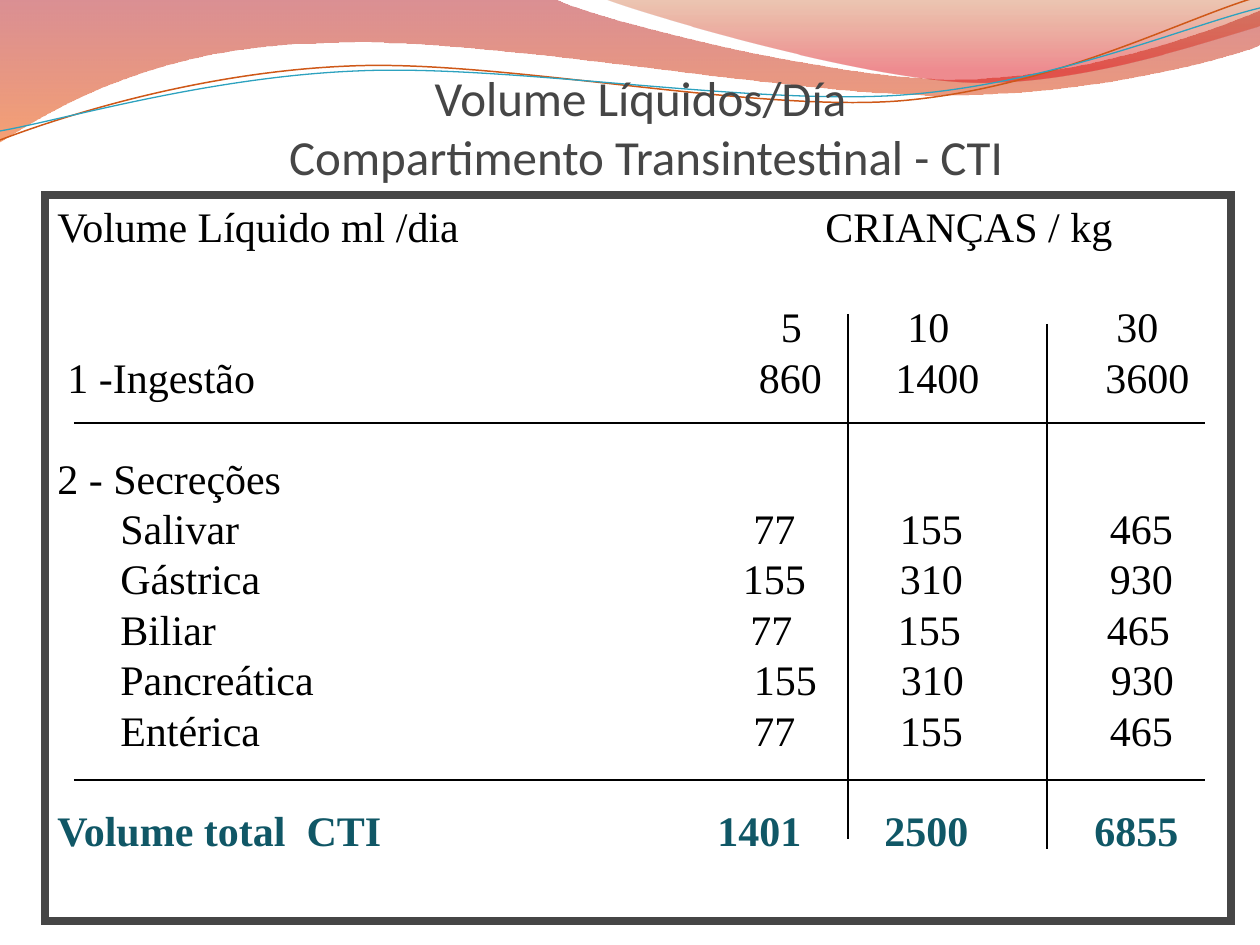
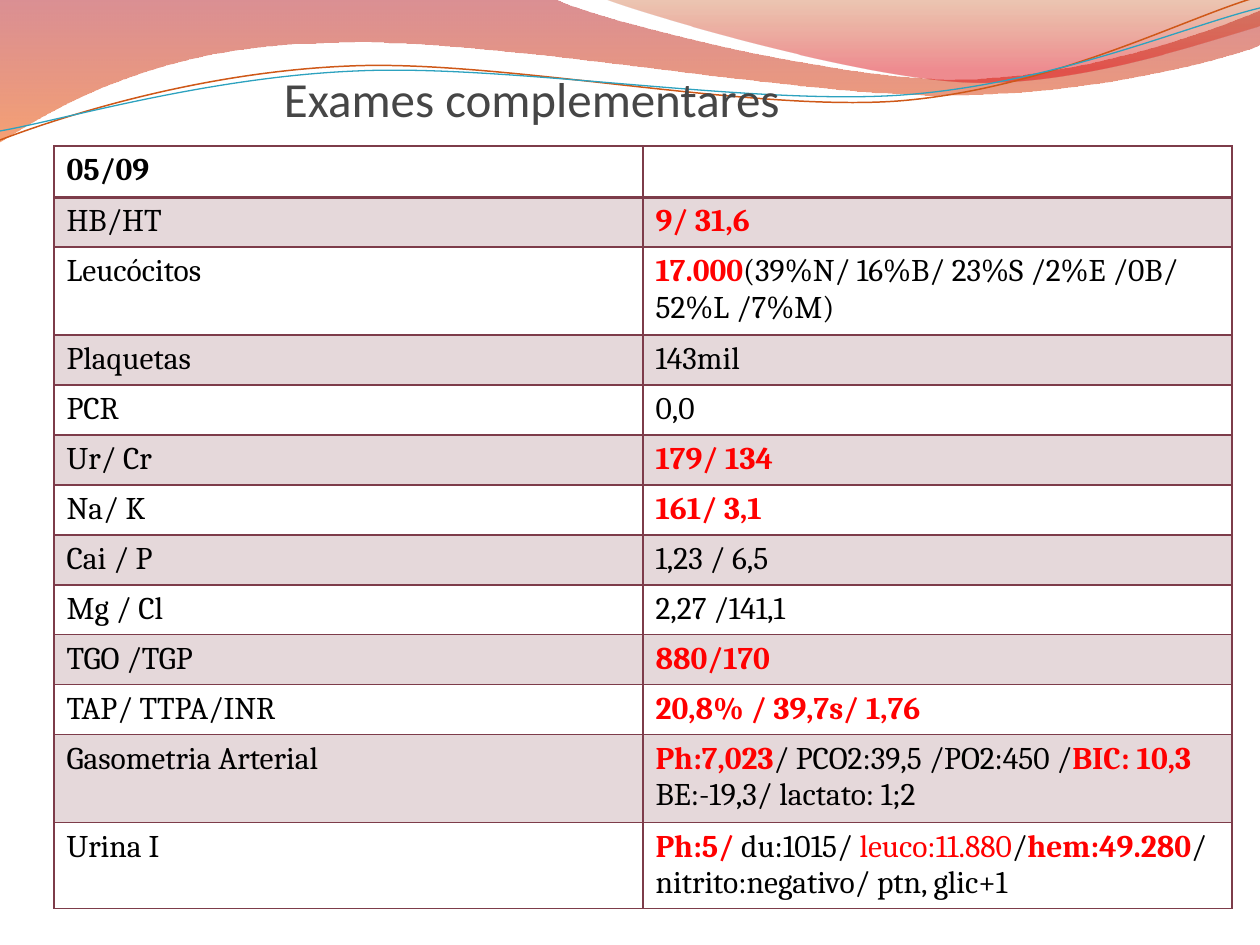
from dataclasses import dataclass

from lxml.etree import SubElement
from pptx import Presentation
from pptx.dml.color import RGBColor as Rgb
from pptx.enum.shapes import MSO_CONNECTOR as Connector, MSO_SHAPE as Shape
from pptx.enum.text import MSO_ANCHOR as Anchor, MSO_AUTO_SIZE as AutoSize, PP_ALIGN as Align
from pptx.oxml.ns import qn
from pptx.util import Emu, Pt


@dataclass(frozen=True)
class Theme:
    ink: str = "000000"
    slate: str = "464646"
    teal: str = "105766"
    alert: str = "FF0000"
    wine: str = "7D3C4A"
    orange_line: str = "CF5818"
    blue_line: str = "2DA2BF"
    title_font: str = "Calibri"
    volume_font: str = "Times New Roman"
    exam_font: str = "Cambria"
    title_size: float = 28
    volume_size: float = 24
    volume_leading: float = 28.8
    exam_size: float = 18


THEME = Theme()
PX = 914400 / 126

BANDS = [
    ([(0, 0), (554, -1)],
     [[(600, 21), (837, 79), (955, 79)],
      [(1075, 79), (1207, 33), (1260, 11)],
      [(1261, 45)],
      [(1239, 55), (1096, 96), (940, 95)],
      [(784, 95), (481, 35), (324, 43)],
      [(163, 45), (58, 105), (-1, 142)]],
     [(0, "AF0911", 45), (1, "EE5300", 55)]),
    ([(604, -1)],
     [[(641, 14), (859, 78), (969, 82)],
      [(1079, 86), (1211, 40), (1260, 26)],
      [(1260, 0)]],
     [(0, "C24400", 30), (0.8, "DC000B", 45)]),
]
RIBBONS = [
    ([(0, 140)],
     [[(60, 117), (199, 72), (349, 66)],
      [(498, 59), (747, 112), (898, 101)],
      [(1050, 89), (1182, 19), (1257, -3)]],
     THEME.orange_line, 0.85),
    ([(0, 131)],
     [[(59, 121), (207, 77), (357, 71)],
      [(508, 64), (752, 106), (903, 95)],
      [(1053, 84), (1186, 26), (1260, 8)]],
     THEME.blue_line, 0.75),
]


def weight_stops(*centers, indent=0):
    lead = [(indent, "l")] if indent else []
    return lead + [(center, "ctr") for center in centers]


SECRETION_STOPS = weight_stops(717, 874, 1084, indent=63)
VOLUME_ROWS = [
    ("Volume Líquido ml /dia\tCRIANÇAS / kg", [(768, "l")], False),
    ("\t5\t10\t30", weight_stops(734, 871, 1080), True),
    ("\t1 -Ingestão\t860\t1400\t3600", weight_stops(733, 880, 1090, indent=10), False),
    ("2 - Secreções", [], True),
    ("\tSalivar\t77\t155\t465", SECRETION_STOPS, False),
    ("\tGástrica\t155\t310\t930", SECRETION_STOPS, False),
    ("\tBiliar\t77\t155\t465", weight_stops(714, 872, 1081, indent=63), False),
    ("\tPancreática\t155\t310\t930", weight_stops(728, 875, 1085, indent=63), False),
    ("\tEntérica\t77\t155\t465", SECRETION_STOPS, False),
    ("Volume total  CTI\t1401\t2500\t6855", weight_stops(702, 869, 1079), True),
]

NORMAL = (THEME.ink, False)
HEADING = (THEME.ink, True)
ALTERED = (THEME.alert, True)
NOTED = (THEME.alert, False)
EXAMS = [
    ("HB/HT", [("9/ 31,6", ALTERED)]),
    ("Leucócitos", [("17.000", ALTERED), ("(39%N/ 16%B/ 23%S /2%E /0B/ 52%L /7%M)", NORMAL)]),
    ("Plaquetas", [("143mil", NORMAL)]),
    ("PCR", [("0,0", NORMAL)]),
    ("Ur/ Cr", [("179/ 134", ALTERED)]),
    ("Na/ K", [("161/ 3,1", ALTERED)]),
    ("Cai / P", [("1,23 / 6,5", NORMAL)]),
    ("Mg / Cl", [("2,27 /141,1", NORMAL)]),
    ("TGO /TGP", [("880/170", ALTERED)]),
    ("TAP/ TTPA/INR", [("20,8% / 39,7s/ 1,76", ALTERED)]),
    ("Gasometria Arterial", [("Ph:7,023", ALTERED), ("/ PCO2:39,5 /PO2:450 /", NORMAL),
                             ("BIC: 10,3", ALTERED), (" BE:-19,3/ lactato: 1;2", NORMAL)]),
    ("Urina I", [("Ph:5/", ALTERED), (" du:1015/ ", NORMAL), ("leuco:11.880", NOTED),
                 ("/", NORMAL), ("hem:49.280", ALTERED),
                 ("/ nitrito:negativo/ ptn, glic+1", NORMAL)]),
]
TALL_EXAMS = {"Leucócitos": 88, "Gasometria Arterial": 88, "Urina I": 86}


def px(length):
    return Emu(round(length * PX))


def rgb(color):
    return Rgb.from_string(color)


def format_run(run, font, size, color, bold=False):
    run.font.name = font
    run.font.size = Pt(size)
    run.font.color.rgb = rgb(color)
    run.font.bold = bold


def set_alpha(color_element, percent):
    SubElement(color_element, qn("a:alpha")).set("val", str(percent * 1000))


def bend(outline, straight_count, segments):
    contour = next(outline.element.iter(qn("a:path")))
    legs = list(contour.iter(qn("a:lnTo")))[straight_count:]
    for segment in segments:
        used, legs = legs[:len(segment)], legs[len(segment):]
        if len(segment) == 3:
            curve = SubElement(contour, qn("a:cubicBezTo"))
            used[0].addprevious(curve)
            for leg in used:
                curve.append(leg[0])
                contour.remove(leg)


def add_outline(slide, start, segments, close):
    points = start + [point for segment in segments for point in segment]
    first, *rest = [(px(x), px(y)) for x, y in points]
    builder = slide.shapes.build_freeform(*first)
    builder.add_line_segments(rest, close=close)
    outline = builder.convert_to_shape()
    bend(outline, len(start) - 1, segments)
    outline.shadow.inherit = False
    return outline


def add_band(slide, start, segments, stops):
    band = add_outline(slide, start, segments, True)
    band.line.fill.background()
    band.fill.gradient()
    band.fill.gradient_angle = 270
    for stop, (position, color, _) in zip(band.fill.gradient_stops, stops):
        stop.position = position
        stop.color.rgb = rgb(color)
    for tint, (_, _, alpha) in zip(band.element.iter(qn("a:srgbClr")), stops):
        set_alpha(tint, alpha)
    return band


def add_ribbon(slide, start, segments, color, width):
    ribbon = add_outline(slide, start, segments, False)
    ribbon.fill.background()
    ribbon.line.color.rgb = rgb(color)
    ribbon.line.width = Pt(width)
    return ribbon


def decorate_master(master, slide):
    waves = [add_band(slide, *band) for band in BANDS]
    waves += [add_ribbon(slide, *ribbon) for ribbon in RIBBONS]
    for number, wave in enumerate(waves, 20):
        wave.element.nvSpPr.cNvPr.set("id", str(number))
        master.element.cSld.spTree.append(wave.element)


def set_title(slide, text, left, top, width, height, align):
    title = slide.shapes.title
    title.left, title.top, title.width, title.height = map(px, (left, top, width, height))
    frame = title.text_frame
    frame.text = text
    frame.word_wrap = True
    frame.auto_size = AutoSize.NONE
    frame.vertical_anchor = Anchor.BOTTOM
    frame.margin_left = frame.margin_right = frame.margin_bottom = 0
    frame.margin_top = px(6)
    frame.paragraphs[0].alignment = align
    for run in frame.paragraphs[0].runs:
        format_run(run, THEME.title_font, THEME.title_size, THEME.slate)


def add_rule(slide, *ends):
    rule = slide.shapes.add_connector(Connector.STRAIGHT, *map(px, ends))
    rule.line.color.rgb = rgb(THEME.ink)
    rule.line.width = Pt(0.75)
    SubElement(rule.element.spPr, qn("a:effectLst"))


def add_volume_panel(slide, left, top, width, height):
    panel = slide.shapes.add_shape(Shape.RECTANGLE, *map(px, (left, top, width, height)))
    panel.shadow.inherit = False
    panel.fill.background()
    panel.line.color.rgb = rgb(THEME.slate)
    panel.line.width = Pt(4.5)
    SubElement(panel.element.spPr.find(qn("a:ln")), qn("a:miter")).set("lim", "800000")
    frame = panel.text_frame
    frame.text = "\n".join(text for text, _, _ in VOLUME_ROWS)
    frame.word_wrap = True
    frame.vertical_anchor = Anchor.TOP
    frame.margin_top = px(5)
    elements = panel.element.iter(qn("a:p"))
    for paragraph, element, (text, stops, spaced) in zip(frame.paragraphs, elements, VOLUME_ROWS):
        tabs = SubElement(element.get_or_add_pPr(), qn("a:tabLst"))
        for position, align in stops:
            tab = SubElement(tabs, qn("a:tab"))
            tab.set("pos", str(px(position)))
            tab.set("algn", align)
        paragraph.alignment = Align.LEFT
        paragraph.line_spacing = Pt(THEME.volume_leading)
        if spaced:
            paragraph.space_before = Pt(THEME.volume_leading)
        total = text.startswith("Volume total")
        for run in paragraph.runs:
            format_run(run, THEME.volume_font, THEME.volume_size,
                       THEME.teal if total else THEME.ink, total)


def add_borders(tc, widths):
    properties = tc.get_or_add_tcPr()
    for side, width in widths.items():
        border = SubElement(properties, qn(f"a:ln{side}"))
        border.set("w", str(Pt(width)))
        fill = SubElement(border, qn("a:solidFill"))
        SubElement(fill, qn("a:srgbClr")).set("val", THEME.wine)


def fill_cell(cell, tc, pieces, row):
    add_borders(tc, {"L": 1, "R": 1, "T": 2 if row == 1 else 1, "B": 2 if row == 0 else 1})
    if row % 2:
        cell.fill.solid()
        cell.fill.fore_color.rgb = rgb(THEME.wine)
        set_alpha(tc.tcPr.find(qn("a:solidFill")).find(qn("a:srgbClr")), 20)
    else:
        cell.fill.background()
    paragraph = cell.text_frame.paragraphs[0]
    for text, (color, bold) in pieces:
        run = paragraph.add_run()
        run.text = text
        format_run(run, THEME.exam_font, THEME.exam_size, color, bold)


def add_exam_table(slide, left, top, column_width, row_height):
    rows = [([("05/09", HEADING)], [])]
    rows += [([(label, NORMAL)], result) for label, result in EXAMS]
    heights = [TALL_EXAMS.get(label[0][0], row_height) for label, _ in rows]
    holder = slide.shapes.add_table(len(rows), 2, px(left), px(top),
                                    px(2 * column_width), px(sum(heights)))
    table = holder.table
    table.first_row = table.horz_banding = False
    for column in table.columns:
        column.width = px(column_width)
    for row, height in zip(table.rows, heights):
        row.height = px(height)
    elements = holder.element.iter(qn("a:tc"))
    contents = [(number, pieces) for number, row in enumerate(rows) for pieces in row]
    for cell, tc, (number, pieces) in zip(table.iter_cells(), elements, contents):
        fill_cell(cell, tc, pieces, number)


def main():
    deck = Presentation()
    deck.slide_width, deck.slide_height = px(1260), px(945)
    title_only = deck.slide_layouts[5]

    volumes = deck.slides.add_slide(title_only)
    decorate_master(deck.slide_master, volumes)
    set_title(volumes, "Volume Líquidos/Día \vCompartimento Transintestinal - CTI",
              63, -57, 1166, 242, Align.CENTER)
    add_volume_panel(volumes, 45, 195, 1186, 726)
    for y in (423, 780):
        add_rule(volumes, 74, y, 1205, y)
    for x, top in ((848, 314), (1047, 324)):
        add_rule(volumes, x, top, x, top + 525)

    exams = deck.slides.add_slide(title_only)
    add_exam_table(exams, 54, 146, 589, 50)
    set_title(exams, "Exames complementares", 284, 50, 1594, 77, Align.LEFT)

    deck.save("out.pptx")


if __name__ == "__main__":
    main()
